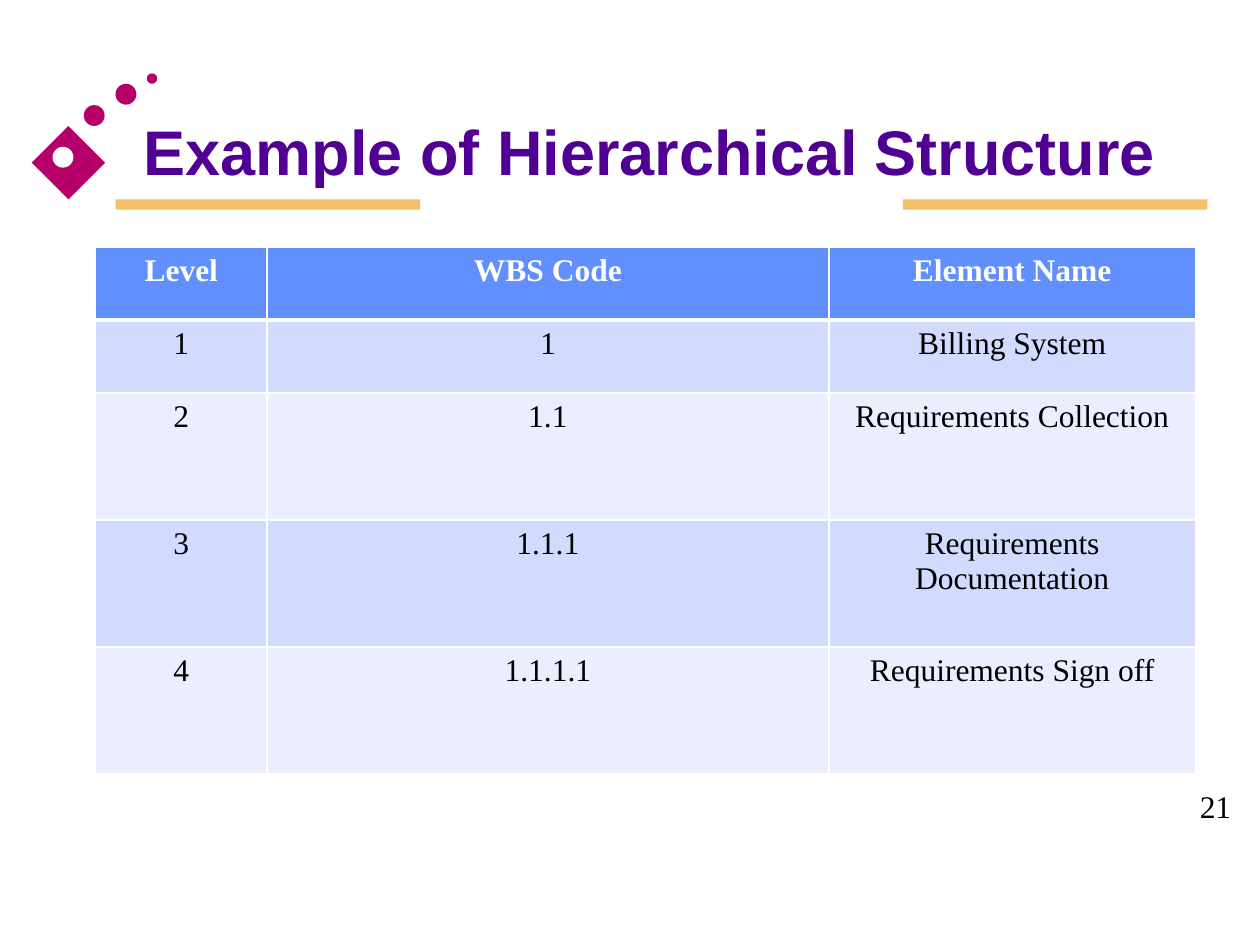
from lxml import etree
from pptx import Presentation
from pptx.dml.color import RGBColor
from pptx.enum.shapes import MSO_SHAPE
from pptx.enum.text import MSO_ANCHOR, PP_ALIGN
from pptx.oxml.ns import qn
from pptx.util import Cm, Pt

WHITE = RGBColor(0xFF, 0xFF, 0xFF)
BLACK = RGBColor(0x00, 0x00, 0x00)
GOLD = RGBColor(0xF6, 0xBF, 0x69)
MAGENTA = RGBColor(0xB5, 0x00, 0x69)
PURPLE = RGBColor(0x50, 0x00, 0x93)
HEADER_BLUE = RGBColor(0x61, 0x8F, 0xFD)
BAND_DARK = RGBColor(0xD2, 0xDB, 0xFE)
BAND_LIGHT = RGBColor(0xEA, 0xEE, 0xFF)


def style_text(paragraph, font_name, size, color, bold, align):
    paragraph.alignment = align
    paragraph.font.name = font_name
    paragraph.font.size = Pt(size)
    paragraph.font.color.rgb = color
    paragraph.font.bold = bold


def add_border(cell, side, points):
    line = etree.SubElement(cell._tc.get_or_add_tcPr(), qn(f"a:{side}"), w=str(Pt(points)))
    fill = etree.SubElement(line, qn("a:solidFill"))
    etree.SubElement(fill, qn("a:srgbClr"), val=str(WHITE))


prs = Presentation()
prs.slide_width, prs.slide_height = Cm(25.4), Cm(19.05)
slide = prs.slides.add_slide(prs.slide_layouts[6])

# Gold bars, diamond and trail of dots
ornaments = [
    (MSO_SHAPE.RECTANGLE, 2.33, 4.02, 6.14, 0.21, GOLD),
    (MSO_SHAPE.DIAMOND, 0.64, 2.54, 1.48, 1.48, MAGENTA),
    (MSO_SHAPE.OVAL, 1.06, 2.96, 0.42, 0.42, WHITE),
    (MSO_SHAPE.OVAL, 1.69, 2.12, 0.42, 0.42, MAGENTA),
    (MSO_SHAPE.OVAL, 2.33, 1.69, 0.42, 0.42, MAGENTA),
    (MSO_SHAPE.OVAL, 2.96, 1.48, 0.21, 0.21, MAGENTA),
    (MSO_SHAPE.RECTANGLE, 18.2, 4.02, 6.14, 0.21, GOLD),
]
for kind, left, top, width, height, color in ornaments:
    ornament = slide.shapes.add_shape(kind, Cm(left), Cm(top), Cm(width), Cm(height))
    ornament.shadow.inherit = False
    ornament.fill.solid()
    ornament.fill.fore_color.rgb = color
    ornament.line.fill.background()

# Page number
page_number = slide.shapes.add_shape(
    MSO_SHAPE.DOUBLE_BRACKET, Cm(23.88), Cm(15.7), Cm(1.52), Cm(1.09))
page_number.adjustments[0] = 0.18
page_number.shadow.inherit = False
page_number.fill.background()
page_number.line.fill.background()
page_number.text_frame.word_wrap = False
page_number.text_frame.vertical_anchor = MSO_ANCHOR.MIDDLE
page_number.text_frame.text = "21"
style_text(page_number.text_frame.paragraphs[0], "Times New Roman", 18, BLACK, False,
           PP_ALIGN.LEFT)

# Title
title = slide.shapes.add_textbox(Cm(1.57), Cm(1.73), Cm(23.06), Cm(2.59))
title.text_frame.word_wrap = True
title.text_frame.vertical_anchor = MSO_ANCHOR.MIDDLE
title.text_frame.text = "Example of Hierarchical Structure"
style_text(title.text_frame.paragraphs[0], "Arial", 36, PURPLE, True, PP_ALIGN.CENTER)

# Work breakdown table
rows = [
    ("Level", "WBS Code", "Element Name"),
    ("1", "1", "Billing System"),
    ("2", "1.1", "Requirements Collection"),
    ("3", "1.1.1", "Requirements Documentation"),
    ("4", "1.1.1.1", "Requirements Sign off"),
]
column_widths = [3.45, 11.33, 7.39]
row_heights = [1.47, 1.47, 2.56, 2.56, 2.56]
wbs = slide.shapes.add_table(
    len(rows), len(column_widths), Cm(1.93), Cm(4.98),
    Cm(sum(column_widths)), Cm(sum(row_heights))).table
for column, width in zip(wbs.columns, column_widths):
    column.width = Cm(width)

for r, (labels, height) in enumerate(zip(rows, row_heights)):
    wbs.rows[r].height = Cm(height)
    is_header = r == 0
    band = HEADER_BLUE if is_header else (BAND_DARK if r % 2 else BAND_LIGHT)
    for c, label in enumerate(labels):
        cell = wbs.cell(r, c)
        cell.text = label
        style_text(cell.text_frame.paragraphs[0], "Times New Roman", 18,
                   WHITE if is_header else BLACK, is_header, PP_ALIGN.CENTER)
        # The rule under the header is heavier than the rest
        add_border(cell, "lnL", 1)
        add_border(cell, "lnR", 1)
        add_border(cell, "lnT", 3 if r == 1 else 1)
        add_border(cell, "lnB", 3 if is_header else 1)
        cell.fill.solid()
        cell.fill.fore_color.rgb = band

prs.save("out.pptx")
